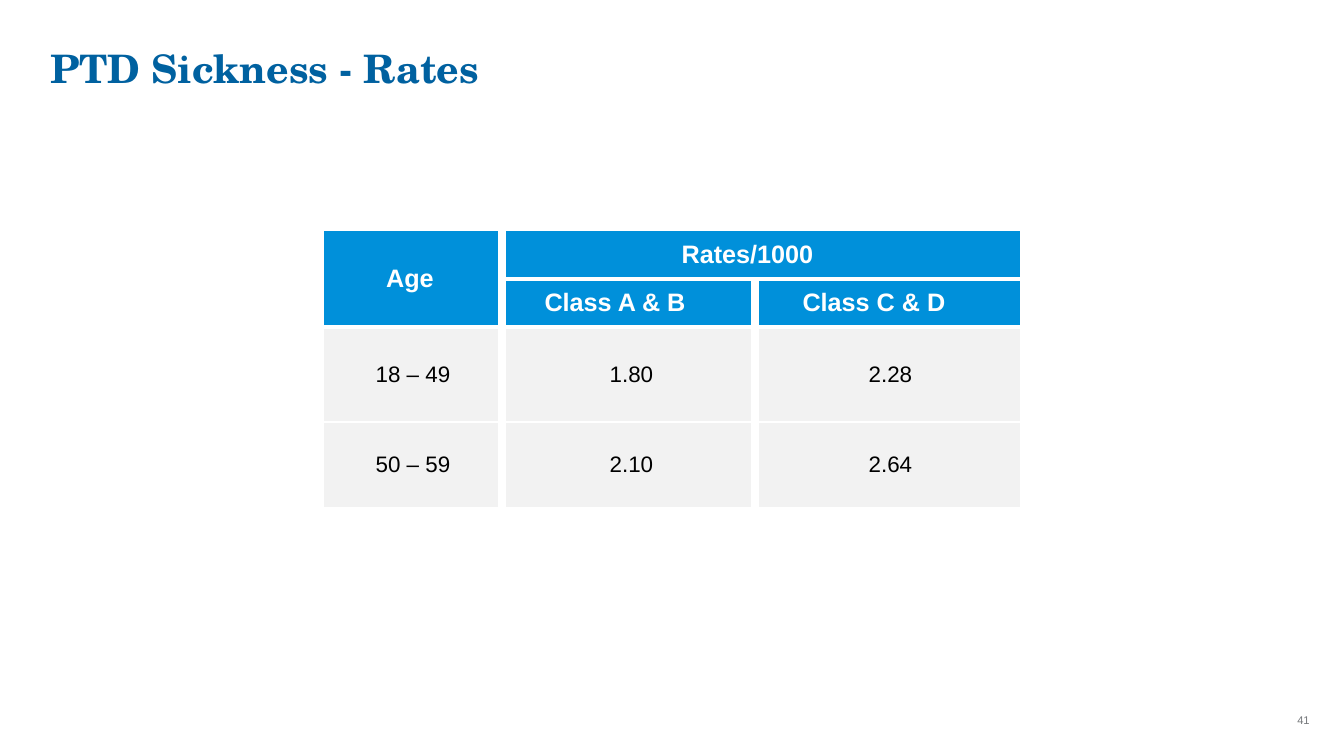
import itertools
from dataclasses import dataclass

import pptx
import pptx.util
import pptx.dml.color
import pptx.enum.text
import pptx.oxml
import pptx.oxml.ns

TITLE = "PTD Sickness - Rates"
PAGE_NUMBER = "41"

# (row, column, rows spanned, columns spanned, wording, left inset, right inset)
HEADINGS = [
    (0, 0, 2, 1, "Age", 0, 6),
    (0, 1, 1, 2, "Rates/1000", 0, 27),
    (1, 1, 1, 1, "Class A & B", 0, 27),
    (1, 2, 1, 1, "Class C & D", 0, 27),
]
RATES = [
    ("18 – 49", "1.80", "2.28"),
    ("50 – 59", "2.10", "2.64"),
]
HEADING_ROWS = 2

# px
SLIDE_SIZE = (1344, 756)
TITLE_BOX = (50, 50, 1042, 81)
PAGE_BOX = (1263, 708, 81, 25)
TABLE_ORIGIN = (324, 231)
COLUMN_WIDTHS = (178, 253, 265)
ROW_HEIGHTS = (48, 48, 95, 86)

# pt, one width for each grid line, 0 where no line is drawn
ROW_EDGES = (0, 3, 3, 2.25, 2.25)
COLUMN_EDGES = (0, 6, 6, 0)


@dataclass(frozen=True)
class Theme:
    title: str = "0061A0"
    heading: str = "0090DA"
    body: str = "F2F2F2"
    white: str = "FFFFFF"
    black: str = "000000"
    grey: str = "75787B"
    serif: str = "TeX Gyre Schola"
    sans: str = "Arial"
    title_size: int = 28
    heading_size: int = 18
    body_size: int = 16
    page_size: int = 8


THEME = Theme()
EMU_PER_PX = 914400 / 100.8
CENTER = pptx.enum.text.PP_ALIGN.CENTER
MIDDLE = pptx.enum.text.MSO_ANCHOR.MIDDLE


def px(*lengths):
    return [pptx.util.Emu(round(length * EMU_PER_PX)) for length in lengths]


def rgb(color):
    return pptx.dml.color.RGBColor.from_string(color)


def write(frame, wording, size, color, bold=False, face=THEME.sans, align=CENTER):
    paragraph = frame.paragraphs[0]
    paragraph.alignment = align
    run = paragraph.add_run()
    run.text = wording
    font = run.font
    font.name, font.size, font.bold = face, pptx.util.Pt(size), bold
    font.color.rgb = rgb(color)
    return paragraph


def set_insets(holder, left, top, right, bottom):
    (holder.margin_left, holder.margin_top,
     holder.margin_right, holder.margin_bottom) = px(left, top, right, bottom)


def set_borders(cell, **widths):
    """Line the L, R, T and B sides in white; call before the fill is set."""
    for side, width in widths.items():
        paint = (f'<a:solidFill><a:srgbClr val="{THEME.white}"/></a:solidFill>'
                 if width else "<a:noFill/>")
        cell._tc.get_or_add_tcPr().append(pptx.oxml.parse_xml(
            f'<a:ln{side} {pptx.oxml.ns.nsdecls("a")} '
            f'w="{pptx.util.Pt(width)}">{paint}</a:ln{side}>'))


def fill_cell(table, row, column, height, width, wording, left, right):
    rows, columns = range(row, row + height), range(column, column + width)
    heading = row < HEADING_ROWS
    for r, c in itertools.product(rows, columns):
        part = table.cell(r, c)
        set_borders(
            part,
            L=COLUMN_EDGES[c] if c == columns[0] else 0,
            R=COLUMN_EDGES[c + 1] if c == columns[-1] else 0,
            T=ROW_EDGES[r] if r == rows[0] else 0,
            B=ROW_EDGES[r + 1] if r == rows[-1] else 0)
        part.fill.solid()
        part.fill.fore_color.rgb = rgb(THEME.heading if heading else THEME.body)
    cell = table.cell(row, column)
    if height * width > 1:
        cell.merge(table.cell(rows[-1], columns[-1]))
    cell.vertical_anchor = MIDDLE
    set_insets(cell, left, 0 if heading else 3, right, 0 if heading else 3)
    if heading:
        write(cell.text_frame, wording, THEME.heading_size, THEME.white, bold=True)
    else:
        write(cell.text_frame, wording, THEME.body_size, THEME.black)


def add_rates_table(slide):
    table = slide.shapes.add_table(
        len(ROW_HEIGHTS), len(COLUMN_WIDTHS),
        *px(*TABLE_ORIGIN, sum(COLUMN_WIDTHS), sum(ROW_HEIGHTS))).table
    table.first_row = table.horz_banding = False
    for column, width in zip(table.columns, px(*COLUMN_WIDTHS)):
        column.width = width
    for row, height in zip(table.rows, px(*ROW_HEIGHTS)):
        row.height = height
    for heading in HEADINGS:
        fill_cell(table, *heading)
    for r, age_band in enumerate(RATES, HEADING_ROWS):
        for c, wording in enumerate(age_band):
            fill_cell(table, r, c, 1, 1, wording, 12 if c else 6, 6)


def add_title(slide):
    title = slide.shapes.title
    title.left, title.top, title.width, title.height = px(*TITLE_BOX)
    frame = title.text_frame
    frame.vertical_anchor = pptx.enum.text.MSO_ANCHOR.TOP
    frame.auto_size = pptx.enum.text.MSO_AUTO_SIZE.NONE
    set_insets(frame, 0, 0, 0, 0)
    paragraph = write(frame, TITLE, THEME.title_size, THEME.title, bold=True,
                      face=THEME.serif, align=pptx.enum.text.PP_ALIGN.LEFT)
    paragraph.line_spacing = 0.9


def add_page_number(slide):
    frame = slide.shapes.add_textbox(*px(*PAGE_BOX)).text_frame
    frame.word_wrap = True
    frame.vertical_anchor = MIDDLE
    write(frame, PAGE_NUMBER, THEME.page_size, THEME.grey)


def main():
    deck = pptx.Presentation()
    deck.slide_width, deck.slide_height = px(*SLIDE_SIZE)
    slide = deck.slides.add_slide(deck.slide_layouts.get_by_name("Title Only"))
    add_page_number(slide)
    add_title(slide)
    add_rates_table(slide)
    deck.save("out.pptx")


if __name__ == "__main__":
    main()
